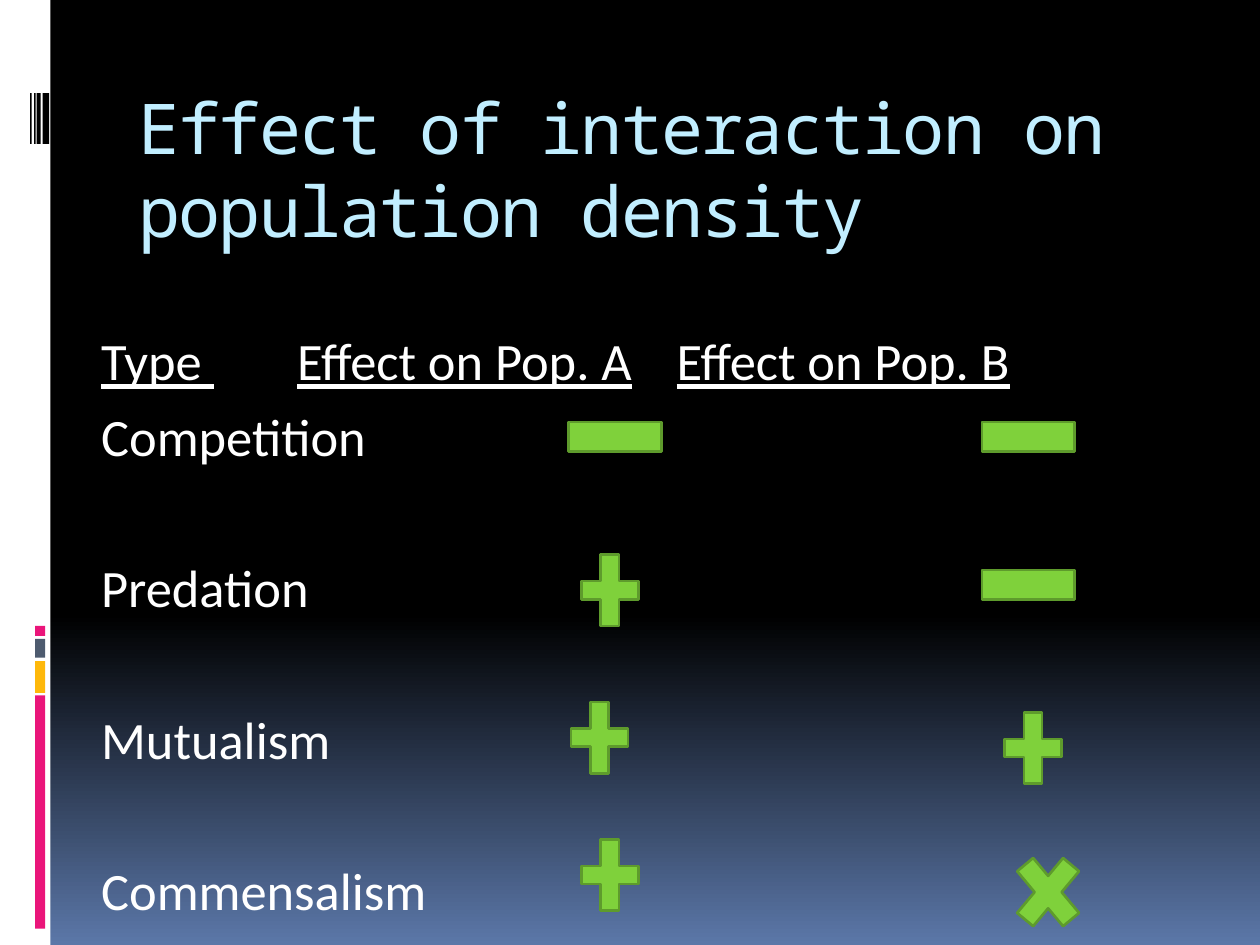
"""Build a slide on how species interactions affect population density."""
from lxml import etree
from pptx import Presentation
from pptx.dml.color import RGBColor
from pptx.enum.shapes import MSO_SHAPE
from pptx.oxml.ns import qn
from pptx.util import Cm, Pt

RECTANGLE = MSO_SHAPE.RECTANGLE
MINUS = MSO_SHAPE.MATH_MINUS
PLUS = MSO_SHAPE.MATH_PLUS
MULTIPLY = MSO_SHAPE.MATH_MULTIPLY

COLORS = {
    "black": "000000", "white": "FFFFFF", "blue": "5B77A8", "pink": "EA157A",
    "amber": "FEB80A", "slate": "4E5B6F", "title": "C1EEFF",
    "green": "7FD13B", "dark green": "5E9B2C",
}


def add_run(paragraph, text, font, size, color, underline=False, spacing=0):
    run = paragraph.add_run()
    run.text = text
    run.font.name = font
    run.font.size = Pt(size)
    run.font.color.rgb = RGBColor.from_string(COLORS[color])
    run.font.underline = underline
    if spacing:
        run.font._element.set("spc", str(spacing))


def add_solid(kind, left, top, width, height, color, outline=None):
    shape = slide.shapes.add_shape(kind, Cm(left), Cm(top), Cm(width), Cm(height))
    shape.shadow.inherit = False
    shape.fill.solid()
    shape.fill.fore_color.rgb = RGBColor.from_string(COLORS[color])
    if outline:
        shape.line.color.rgb = RGBColor.from_string(COLORS[outline])
        shape.line.width = Pt(1.5)
    else:
        shape.line.fill.background()


presentation = Presentation()
presentation.slide_width = Cm(25.4)
presentation.slide_height = Cm(19.05)
slide = presentation.slides.add_slide(presentation.slide_layouts[6])

background = slide.background.fill
background.gradient()
background.gradient_angle = 270
for stop, position, color in zip(background.gradient_stops, (0.65, 1), ("black", "blue")):
    stop.position = position
    stop.color.rgb = RGBColor.from_string(COLORS[color])

add_solid(RECTANGLE, 0, 0, 1.02, 19.05, "white")
for top, height, color in [(14.02, 4.7, "pink"), (13.33, 0.64, "amber"),
                           (12.88, 0.38, "slate"), (12.62, 0.2, "pink")]:
    add_solid(RECTANGLE, 0.71, top, 0.2, height, color)
for left, width in [(0.86, 0.13), (0.74, 0.08), (0.69, 0.03), (0.61, 0.03)]:
    add_solid(RECTANGLE, left, 1.88, width, 1.02, "black")

title = slide.shapes.add_textbox(Cm(2.54), Cm(1.42), Cm(21.59), Cm(3.53)).text_frame
title.word_wrap = True
title.margin_top = Cm(0.3)
title.paragraphs[0].line_spacing = Pt(47.5)
add_run(title.paragraphs[0], "Effect of interaction on population density",
        font="Noto Sans Mono", size=40, color="title", spacing=-100)

body = slide.shapes.add_textbox(Cm(2.04), Cm(6.62), Cm(22.95), Cm(12.43)).text_frame
body.word_wrap = True
body.margin_left = body.margin_top = 0
body_format = {"font": "Calibri", "size": 30, "color": "white"}

header = body.paragraphs[0]
for text, underline in [("Type ", True), ("\t", False), ("Effect on Pop. A", True),
                        ("\t", False), ("Effect on Pop. B", True)]:
    add_run(header, text, underline=underline, **body_format)
tab_list = etree.SubElement(header._p.get_or_add_pPr(), qn("a:tabLst"))
for position in (3.95, 11.6):
    etree.SubElement(tab_list, qn("a:tab"), pos=str(Cm(position)), algn="l")

for text, space in [("Competition", 7), ("Predation", 50.6),
                    ("Mutualism", 50.6), ("Commensalism", 50.6)]:
    paragraph = body.add_paragraph()
    paragraph.space_before = Pt(space)
    add_run(paragraph, text, **body_format)

sign_sizes = {MINUS: (2.54, 2.54), PLUS: (1.57, 1.96), MULTIPLY: (1.78, 2.13)}
for kind, left, top in [
    (MINUS, 11.13, 7.54), (MINUS, 19.46, 7.54),
    (PLUS, 11.51, 10.92), (MINUS, 19.46, 10.52),
    (PLUS, 11.3, 13.89), (PLUS, 20.04, 14.1),
    (PLUS, 11.51, 16.66), (MULTIPLY, 20.24, 16.92),
]:
    add_solid(kind, left, top, *sign_sizes[kind], "green", outline="dark green")

presentation.save("out.pptx")
